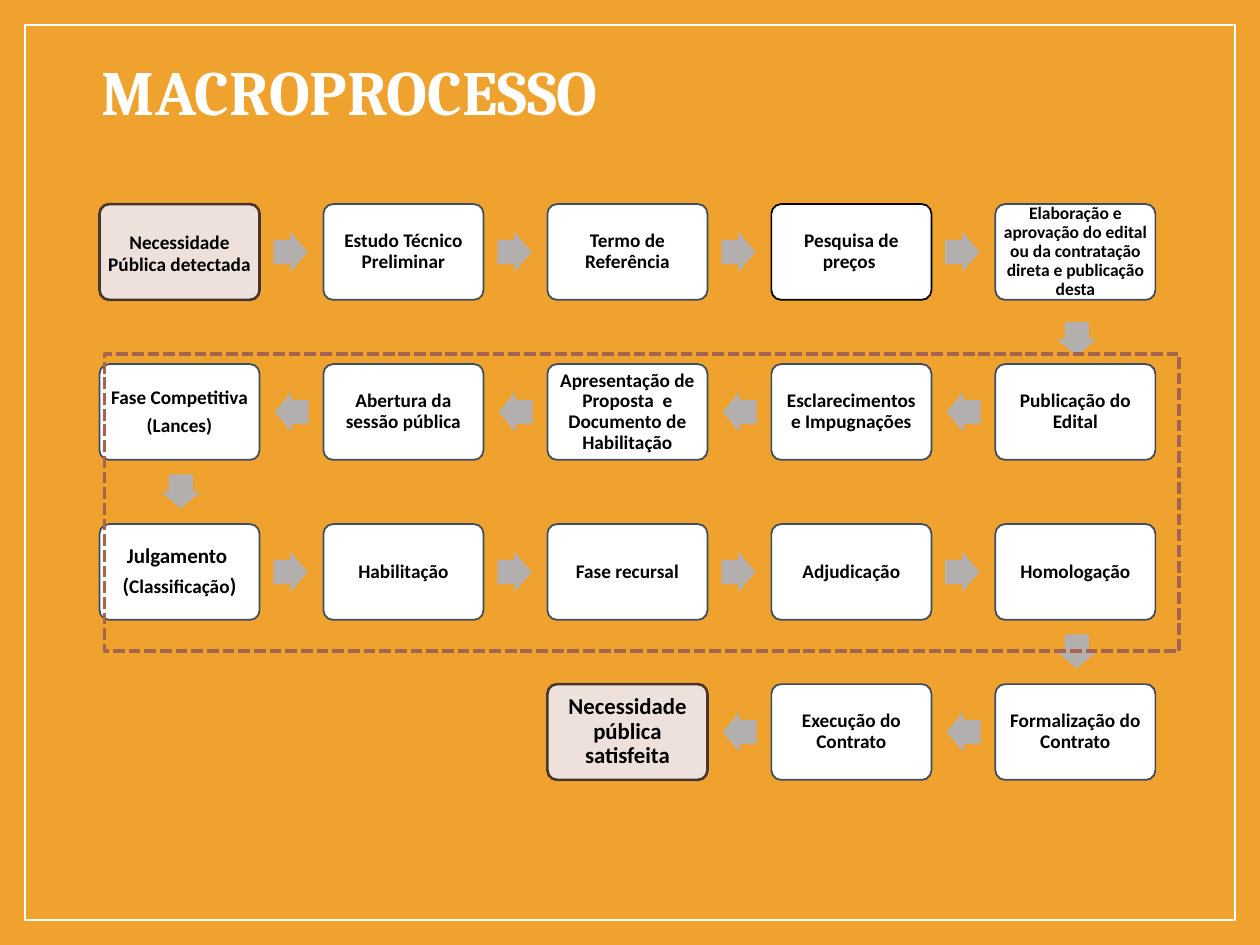
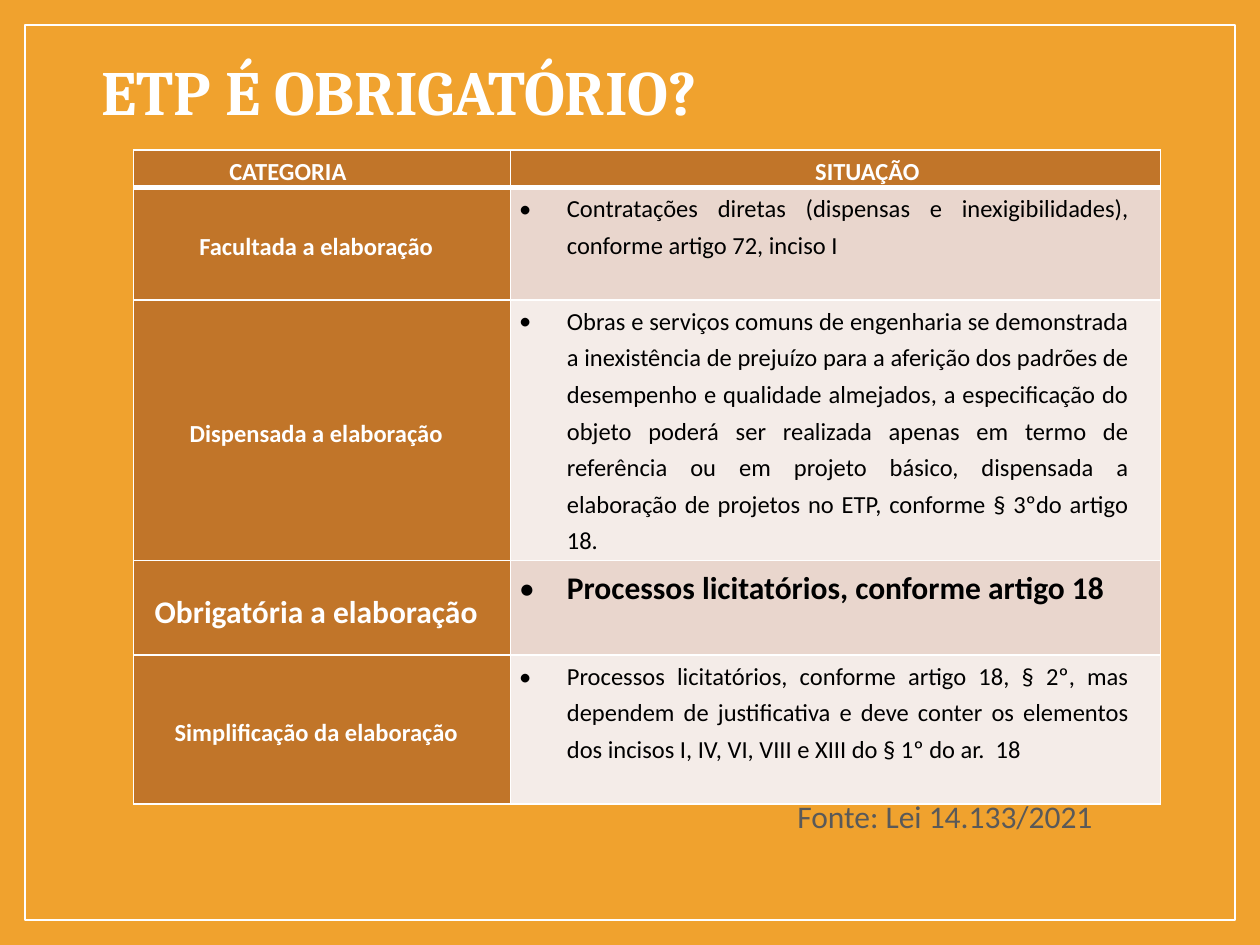
from dataclasses import dataclass

from lxml.etree import SubElement
from pptx import Presentation
from pptx.dml.color import RGBColor
from pptx.enum.dml import MSO_LINE
from pptx.enum.shapes import MSO_SHAPE
from pptx.enum.text import MSO_ANCHOR, PP_ALIGN
from pptx.oxml.ns import qn
from pptx.util import Inches, Pt


@dataclass(frozen=True)
class Theme:
    background: str = "F0A22E"
    white: str = "FFFFFF"
    black: str = "000000"
    milestone_fill: str = "EEE0DB"
    milestone_line: str = "47362C"
    step_line: str = "3E4C60"
    arrow: str = "B2AFAE"
    highlight: str = "A5644E"
    header: str = "C17529"
    bands: tuple = ("E9D6CD", "F4ECE8")
    source: str = "595959"
    title_font: str = "Cambria"
    body_font: str = "Calibri"
    title_size: int = 36
    step_size: int = 11
    table_size: int = 14
    large_size: int = 18


THEME = Theme()

PROCESS_TITLE = "MACROPROCESSO"
STEPS = [
    ["Necessidade| |Pública detectada"],
    ["Estudo Técnico Preliminar"],
    ["Termo de Referência"],
    ["Pesquisa de preços "],
    ["Elaboração e aprovação do edital ou da contratação direta e publicação desta"],
    ["Publicação do Edital"],
    ["Esclarecimentos e Impugnações"],
    ["Apresentação de Proposta  e Documento de Habilitação"],
    ["Abertura da sessão pública"],
    ["Fase Competitiva", "(Lances)"],
    ["Julgamento ", "(|Classificação|)"],
    ["Habilitação"],
    ["Fase recursal"],
    ["Adjudicação"],
    ["Homologação"],
    ["Formalização do Contrato"],
    ["Execução do Contrato"],
    ["Necessidade pública satisfeita"],
]
STEP_SIZES = {
    " ": 14,
    STEPS[4][0]: 10,
    "Julgamento ": 12,
    "(": 12,
    ")": 12,
    STEPS[-1][0]: 13,
}
MILESTONES = (0, len(STEPS) - 1)
PRICE_RESEARCH = 3

TABLE_TITLE = "ETP É OBRIGATÓRIO?"
TABLE_HEADER = ("CATEGORIA", "SITUAÇÃO")
RULES = [
    ("Facultada a elaboração",
     "Contratações diretas (dispensas e inexigibilidades), conforme artigo 72, inciso I"),
    ("Dispensada a elaboração",
     "Obras e serviços comuns de engenharia se demonstrada a inexistência de prejuízo "
     "para a aferição dos padrões de desempenho e qualidade almejados, a especificação "
     "do objeto poderá ser realizada apenas em termo de referência ou em projeto básico, "
     "dispensada a elaboração de projetos no ETP, conforme § 3ºdo artigo 18."),
    ("Obrigatória a elaboração", "Processos licitatórios, conforme artigo 18"),
    ("Simplificação da elaboração",
     "Processos licitatórios, conforme artigo 18, § 2º, mas dependem de justificativa e "
     "deve conter os elementos dos incisos I, IV, VI, VIII e XIII do § 1º do ar.  18"),
]
MANDATORY_ROW = 3
COLUMN_WIDTHS = (2.99, 5.16)
ROW_HEIGHTS = (0.3, 0.89, 2.07, 0.59, 1.18)
MANDATORY_HEIGHT = 0.75
RIGHT_INDENT = 0.18
SOURCE = "Fonte: Lei 14.133/2021"

GRID_COLUMNS = 5
GRID_LEFT, GRID_RIGHT, GRID_TOP = 0.79, 7.9, 1.62
COLUMN_PITCH = (GRID_RIGHT - GRID_LEFT) / (GRID_COLUMNS - 1)
ROW_PITCH = 1.27
STEP_WIDTH, STEP_HEIGHT = 1.27, 0.76
ARROW_WIDTH, ARROW_HEIGHT = 0.27, 0.32


def color(value):
    return RGBColor.from_string(value)


def add_run(paragraph, text, size, font_color, bold=False, font=THEME.body_font):
    run = paragraph.add_run()
    run.text = text
    run.font.size = Pt(size)
    run.font.bold = bold
    run.font.name = font
    run.font.color.rgb = color(font_color)


def add_box(slide, kind, left, top, width, height, fill=None, line=None, weight=1):
    shape = slide.shapes.add_shape(
        kind, Inches(left), Inches(top), Inches(width), Inches(height))
    shape.shadow.inherit = False
    if fill:
        shape.fill.solid()
        shape.fill.fore_color.rgb = color(fill)
    else:
        shape.fill.background()
    if line:
        shape.line.color.rgb = color(line)
        shape.line.width = Pt(weight)
    else:
        shape.line.fill.background()
    return shape


def add_text_box(slide, left, top, width, height):
    box = slide.shapes.add_textbox(Inches(left), Inches(top), Inches(width), Inches(height))
    return box.text_frame


def set_margins(target, horizontal, vertical):
    target.margin_left = target.margin_right = Inches(horizontal)
    target.margin_top = target.margin_bottom = Inches(vertical)


def set_indent(paragraph, left, first_line, right=0):
    properties = paragraph._p.get_or_add_pPr()
    for name, value in (("marL", left), ("marR", right), ("indent", first_line)):
        properties.set(name, str(Inches(value)))
    return properties


def add_titled_slide(presentation, title):
    slide = presentation.slides.add_slide(presentation.slide_layouts[6])
    slide.background.fill.solid()
    slide.background.fill.fore_color.rgb = color(THEME.background)
    add_box(slide, MSO_SHAPE.RECTANGLE, 0.2, 0.2, 9.6, 7.1, THEME.background, THEME.white)
    frame = add_text_box(slide, 0.71, 0.38, 8.5, 0.69)
    frame.word_wrap = True
    frame.vertical_anchor = MSO_ANCHOR.BOTTOM
    paragraph = frame.paragraphs[0]
    paragraph.alignment = PP_ALIGN.JUSTIFY
    paragraph.line_spacing = 0.85
    add_run(paragraph, title, THEME.title_size, THEME.white, True, THEME.title_font)
    return slide


def step_position(index):
    row, place = divmod(index, GRID_COLUMNS)
    column = place if row % 2 == 0 else GRID_COLUMNS - 1 - place
    return GRID_LEFT + column * COLUMN_PITCH, GRID_TOP + row * ROW_PITCH


def add_step(slide, index, lines):
    left, top = step_position(index)
    milestone = index in MILESTONES
    outline = THEME.black if index == PRICE_RESEARCH else THEME.step_line
    shape = add_box(
        slide, MSO_SHAPE.ROUNDED_RECTANGLE, left, top, STEP_WIDTH, STEP_HEIGHT,
        THEME.milestone_fill if milestone else THEME.white,
        THEME.milestone_line if milestone else outline,
        1.5 if milestone else 1)
    shape.adjustments[0] = 0.1
    frame = shape.text_frame
    frame.word_wrap = True
    frame.vertical_anchor = MSO_ANCHOR.MIDDLE
    set_margins(frame, 0.06 if index // GRID_COLUMNS == 1 else 0.04, 0.04)
    for number, line in enumerate(lines):
        paragraph = frame.add_paragraph() if number else frame.paragraphs[0]
        paragraph.alignment = PP_ALIGN.CENTER
        paragraph.line_spacing = 0.9
        paragraph.space_after = Pt(4)
        for text in line.split("|"):
            size = STEP_SIZES.get(text, THEME.step_size)
            add_run(paragraph, text, size, THEME.black, text != " ")


def add_step_arrow(slide, index):
    left, top = step_position(index)
    next_left, next_top = step_position(index + 1)
    if next_top > top:
        gap = 0.91 if index < GRID_COLUMNS else 0.85
        offset_x, offset_y, rotation = 0.51, gap, 90
    elif next_left > left:
        offset_x, offset_y, rotation = 1.38, 0.22, 0
    else:
        offset_x, offset_y, rotation = 1.39 - COLUMN_PITCH, 0.22, 180
    arrow = add_box(slide, MSO_SHAPE.RIGHT_ARROW, left + offset_x, top + offset_y,
                    ARROW_WIDTH, ARROW_HEIGHT, THEME.arrow)
    arrow.adjustments[0], arrow.adjustments[1] = 0.6, 0.5
    arrow.rotation = rotation


def build_process_slide(presentation):
    slide = add_titled_slide(presentation, PROCESS_TITLE)
    for index, lines in enumerate(STEPS):
        add_step(slide, index, lines)
        if index + 1 < len(STEPS):
            add_step_arrow(slide, index)
    area = add_box(slide, MSO_SHAPE.RECTANGLE, 0.83, 2.81, 8.53, 2.36,
                   line=THEME.highlight, weight=2.25)
    area.line.dash_style = MSO_LINE.SQUARE_DOT


def style_cell(cell, row, fill):
    properties = cell._tc.get_or_add_tcPr()
    weights = {"L": 1, "R": 1, "T": 3 if row == 1 else 1, "B": 3 if row == 0 else 1}
    for side, weight in weights.items():
        border = SubElement(properties, qn(f"a:ln{side}"), w=str(Pt(weight)))
        solid = SubElement(border, qn("a:solidFill"))
        SubElement(solid, qn("a:srgbClr"), val=THEME.white)
    cell.fill.solid()
    cell.fill.fore_color.rgb = color(fill)
    set_margins(cell, 0.07, 0)


def fill_cell(cell, row, column, text):
    is_header, is_body = row == 0, row > 0 and column == 1
    style_cell(cell, row, THEME.bands[(row - 1) % 2] if is_body else THEME.header)
    cell.vertical_anchor = MSO_ANCHOR.TOP if is_body else MSO_ANCHOR.MIDDLE
    paragraph = cell.text_frame.paragraphs[0]
    paragraph.line_spacing = 1.23
    justified = is_body or (is_header and column == 0)
    paragraph.alignment = PP_ALIGN.JUSTIFY if justified else PP_ALIGN.CENTER
    if is_body:
        properties = set_indent(paragraph, 0.38, -0.38, RIGHT_INDENT)
        SubElement(properties, qn("a:buFont"), typeface=THEME.body_font)
        SubElement(properties, qn("a:buChar"), char="•")
    else:
        set_indent(paragraph, 0.1, 0.59 if is_header else -0.01, RIGHT_INDENT)
    mandatory = row == MANDATORY_ROW
    add_run(paragraph, text, THEME.large_size if mandatory else THEME.table_size,
            THEME.black if is_body else THEME.white, mandatory or not is_body)


def build_table_slide(presentation):
    slide = add_titled_slide(presentation, TABLE_TITLE)
    rows = [TABLE_HEADER, *RULES]
    heights = list(ROW_HEIGHTS)
    heights[MANDATORY_ROW] = MANDATORY_HEIGHT
    table = slide.shapes.add_table(
        len(rows), len(COLUMN_WIDTHS), Inches(1.06), Inches(1.19),
        Inches(sum(COLUMN_WIDTHS)), Inches(sum(heights))).table
    for column, width in zip(table.columns, COLUMN_WIDTHS):
        column.width = Inches(width)
    for row, height in zip(table.rows, heights):
        row.height = Inches(height)
    for row, texts in enumerate(rows):
        for column, text in enumerate(texts):
            fill_cell(table.cell(row, column), row, column, text)
    frame = add_text_box(slide, 6.23, 6.21, 2.73, 0.47)
    frame.word_wrap = False
    paragraph = frame.paragraphs[0]
    paragraph.line_spacing = 1.23
    set_indent(paragraph, 0.1, -0.1)
    add_run(paragraph, SOURCE, THEME.large_size, THEME.source)


def main():
    presentation = Presentation()
    presentation.slide_width = Inches(10)
    presentation.slide_height = Inches(7.5)
    build_process_slide(presentation)
    build_table_slide(presentation)
    presentation.save("out.pptx")


if __name__ == "__main__":
    main()
